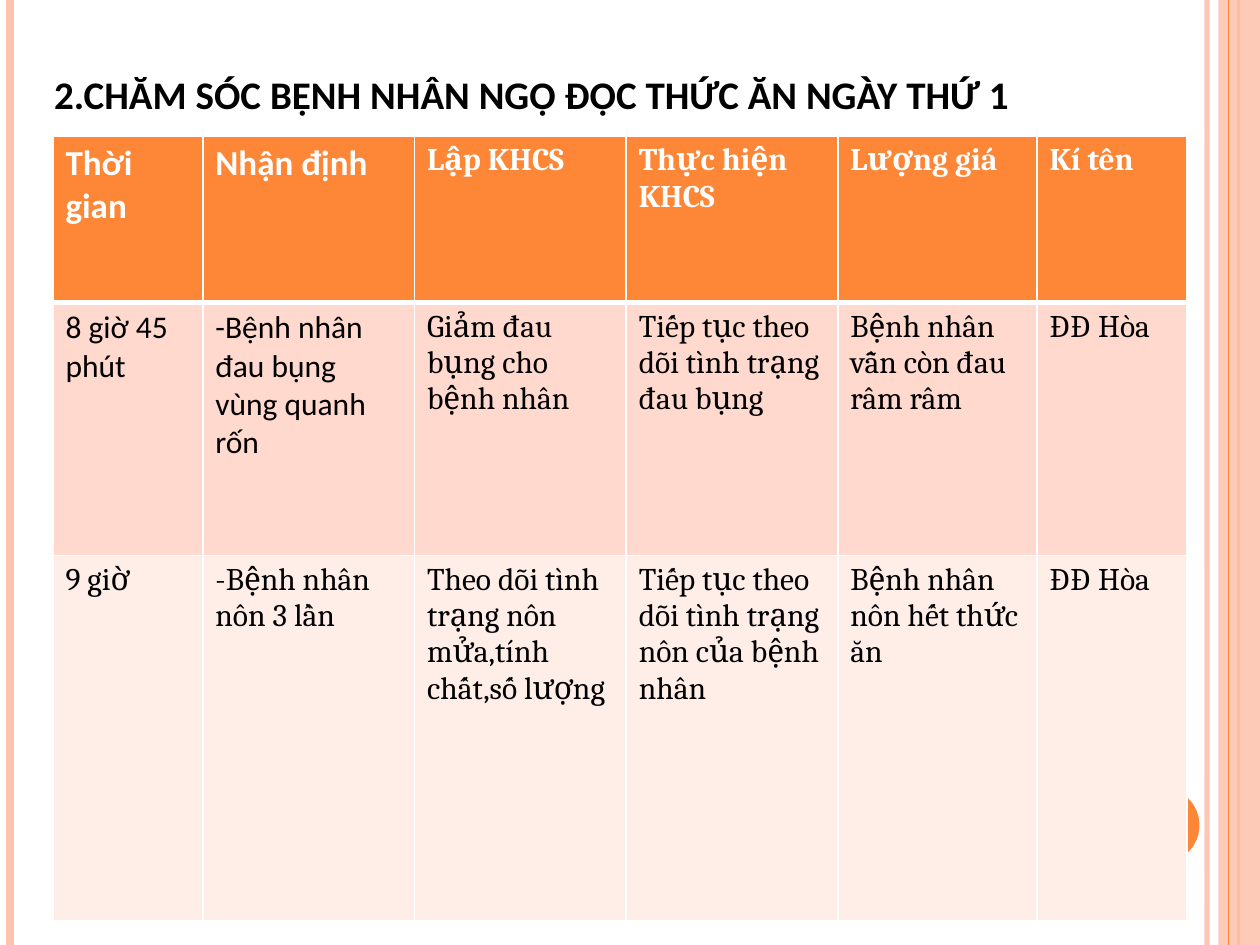
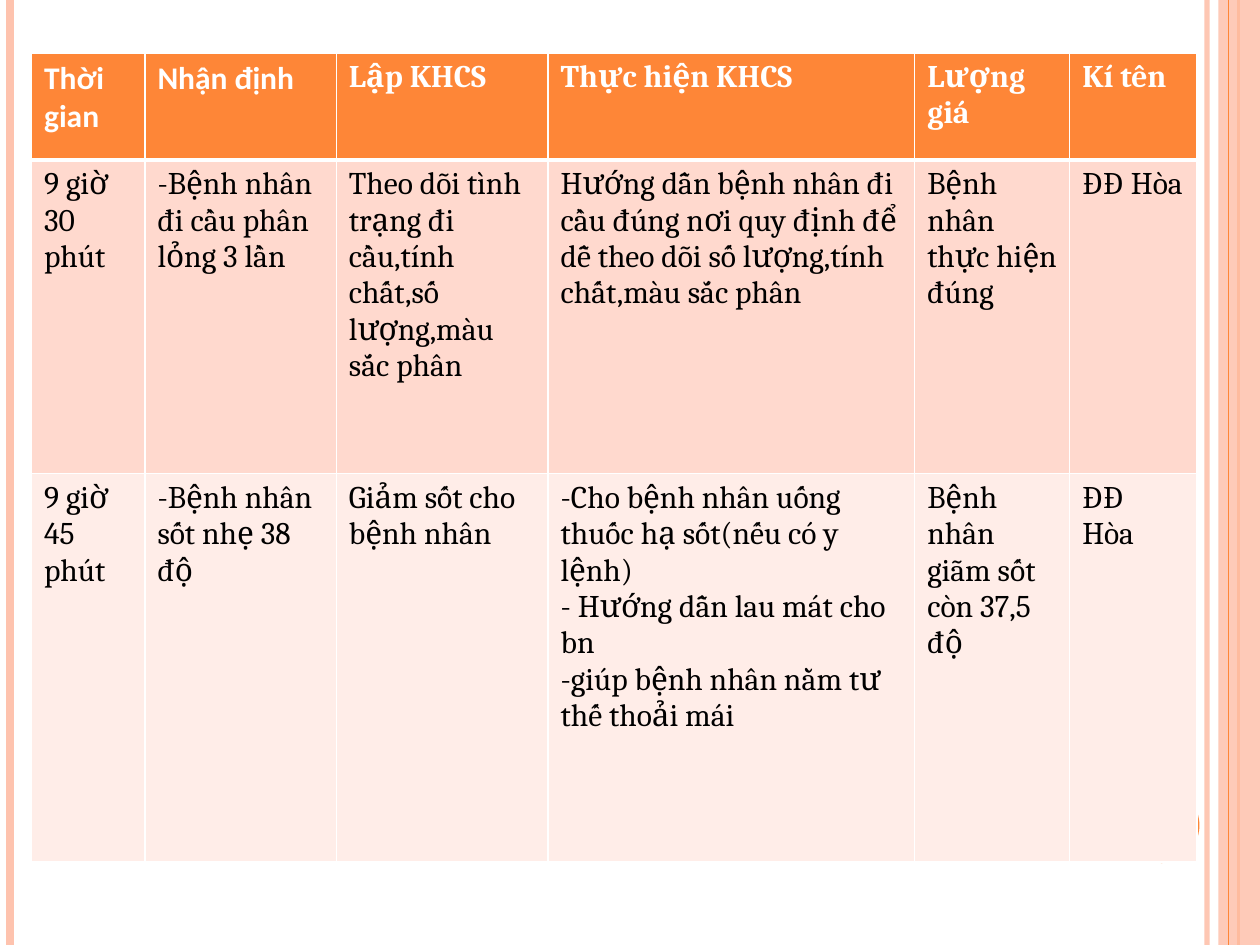
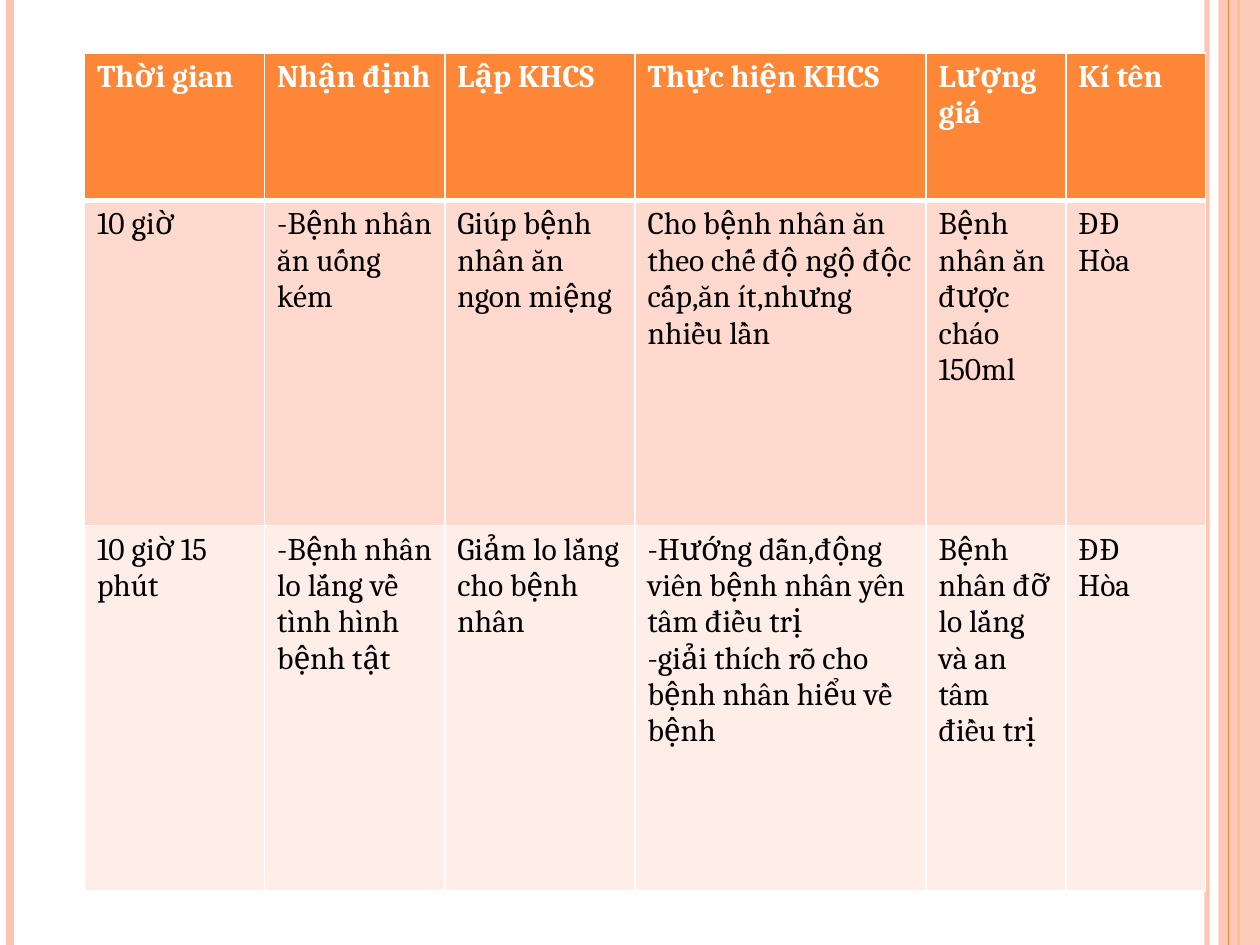
from lxml import etree
from pptx import Presentation, util as u
from pptx.dml.color import RGBColor
from pptx.enum import shapes, text
from pptx.oxml.ns import qn

INK = {
    "black": "000000",
    "white": "FFFFFF",
    "orange": "FE8637",
    "peach": "FEC3AE",
    "rose": "FFD9CE",
    "pale": "FFEDE8",
}
SERIF, SANS = "Cambria", "Calibri"
WIDE, HIGH = 10, 7.5
HEADS = ["Thời gian", "Nhận định", "Lập KHCS", "Thực hiện KHCS", "Lượng giá", "Kí tên"]
NURSE = "ĐĐ Hòa"
SPLIT = "ĐĐ\nHòa"


def tint(name):
    return RGBColor.from_string(INK[name])


def fade(fill, share):
    color = fill._xPr.find(qn("a:solidFill"))[0]
    etree.SubElement(color, qn("a:alpha"), val=str(share * 1000))


class Deck:
    def __init__(self):
        self.file = Presentation()
        self.file.slide_width = u.Inches(WIDE)
        self.file.slide_height = u.Inches(HIGH)
        self.slide = None

    def page(self, title=None):
        layout = self.file.slide_layouts[5 if title else 6]
        self.slide = self.file.slides.add_slide(layout)
        self.frame()
        if title:
            self.title(title)

    def frame(self):
        self.rule(9.58, 3, "peach", 93)
        self.rule(0.08, 4.5, "peach")
        self.rule(9.83, 1.5, "orange")
        self.shape(shapes.MSO_SHAPE.RECTANGLE, (9.67, 0, 0.33, HIGH), "peach", 87)
        self.rule(9.75, 0.75, "orange")
        self.shape(shapes.MSO_SHAPE.OVAL, (8.92, 6.25, 0.6, 0.6), "orange")

    def rule(self, left, width, color, share=100):
        line = self.slide.shapes.add_connector(
            shapes.MSO_CONNECTOR.STRAIGHT,
            u.Inches(left), u.Inches(0), u.Inches(left), u.Inches(HIGH))
        line.line.width = u.Pt(width)
        line.line.color.rgb = tint(color)
        if share < 100:
            fade(line.line.fill, share)
        etree.SubElement(line._element.spPr, qn("a:effectLst"))

    def shape(self, kind, box, color, share=100):
        item = self.slide.shapes.add_shape(kind, *map(u.Inches, box))
        item.shadow.inherit = False
        item.fill.solid()
        item.fill.fore_color.rgb = tint(color)
        item.line.fill.background()
        if share < 100:
            fade(item.fill, share)

    def style(self, frame, size, face, color, bold):
        for para in frame.paragraphs:
            para.alignment = text.PP_ALIGN.LEFT
            for run in para.runs:
                run.font.size = u.Pt(size)
                run.font.name = face
                run.font.bold = bold
                run.font.color.rgb = tint(color)

    def title(self, words):
        item = self.slide.shapes.title
        item.left, item.top = u.Inches(0.33), u.Inches(0.3)
        item.width, item.height = u.Inches(8.33), u.Inches(0.7)
        frame = item.text_frame
        frame.text = words
        frame.word_wrap = True
        frame.auto_size = text.MSO_AUTO_SIZE.NONE
        frame.vertical_anchor = text.MSO_ANCHOR.BOTTOM
        self.style(frame, 27.9, SANS, "black", True)
        frame.paragraphs[0].runs[0].font._element.set("cap", "small")

    def edge(self, cell, row):
        props = cell._tc.get_or_add_tcPr()
        wide = {"T": 3 if row == 1 else 1, "B": 3 if row == 0 else 1}
        for spot, side in enumerate("LRTB"):
            line = etree.Element(qn("a:ln" + side), w=str(u.Pt(wide.get(side, 1))))
            fill = etree.SubElement(line, qn("a:solidFill"))
            etree.SubElement(fill, qn("a:srgbClr"), val=INK["white"])
            props.insert(spot, line)

    def table(self, left, top, cols, rows, body, sans):
        data = [HEADS] + body
        grid = self.slide.shapes.add_table(
            len(rows), len(cols), u.Inches(left), u.Inches(top),
            u.Inches(sum(cols)), u.Inches(sum(rows))).table
        for col, width in zip(grid.columns, cols):
            col.width = u.Inches(width)
        for r, height in enumerate(rows):
            grid.rows[r].height = u.Inches(height)
            for c, words in enumerate(data[r]):
                cell = grid.cell(r, c)
                cell.text_frame.text = words
                cell.fill.solid()
                cell.fill.fore_color.rgb = tint(("orange", "rose", "pale")[r])
                self.edge(cell, r)
                face = SANS if (r, c) in sans else SERIF
                color = "black" if r else "white"
                self.style(cell.text_frame, sans.get((r, c), 18), face, color, r == 0)


def main():
    deck = Deck()

    deck.page("2.chăm sóc bệnh nhân ngộ độc thức ăn ngày thứ 1")
    deck.table(
        0.42, 1.08, [1.19, 1.68, 1.68, 1.68, 1.58, 1.19], [1.32, 2.01, 2.9],
        [["8 giờ 45 phút", "-Bệnh nhân đau bụng vùng quanh rốn",
          "Giảm đau bụng cho bệnh nhân",
          "Tiếp tục theo dõi tình trạng đau bụng",
          "Bệnh nhân vẫn còn đau râm râm", NURSE],
         ["9 giờ", "-Bệnh nhân nôn 3 lần",
          "Theo dõi tình trạng nôn mửa,tính chất,số lượng",
          "Tiếp tục theo dõi tình trạng nôn của bệnh nhân",
          "Bệnh nhân nôn hết thức ăn", NURSE]],
        {(0, 0): 20, (0, 1): 20, (1, 0): 18, (1, 1): 18})

    deck.page()
    deck.table(
        0.25, 0.42, [0.9, 1.52, 1.68, 2.91, 1.23, 1.01], [0.85, 2.49, 3.08],
        [["9 giờ 30 phút", "-Bệnh nhân đi cầu phân lỏng 3 lần",
          "Theo dõi tình trạng đi cầu,tính chất,số lượng,màu sắc phân",
          "Hướng dẫn bệnh nhân đi cầu đúng nơi quy định để dễ theo dõi "
          "số lượng,tính chất,màu sắc phân",
          "Bệnh nhân thực hiện đúng", NURSE],
         ["9 giờ 45 phút", "-Bệnh nhân sốt nhẹ 38 độ",
          "Giảm sốt cho bệnh nhân",
          "-Cho bệnh nhân uống thuốc hạ sốt(nếu có y lệnh)\n"
          "- Hướng dẫn lau mát cho bn\n"
          "-giúp bệnh nhân nằm tư thế thoải mái",
          "Bệnh nhân giãm sốt còn 37,5 độ", SPLIT]],
        {(0, 0): 18, (0, 1): 18})

    deck.page()
    deck.table(
        0.67, 0.42, [1.43, 1.43, 1.51, 2.31, 1.11, 1.11], [1.17, 2.58, 2.9],
        [["10 giờ", "-Bệnh nhân ăn uống kém",
          "Giúp bệnh nhân ăn ngon miệng",
          "Cho bệnh nhân ăn theo chế độ ngộ độc cấp,ăn ít,nhưng nhiều lần",
          "Bệnh nhân ăn được cháo 150ml", SPLIT],
         ["10 giờ 15 phút", "-Bệnh nhân lo lắng về tình hình bệnh tật",
          "Giảm lo lắng cho bệnh nhân",
          "-Hướng dẫn,động viên bệnh nhân yên tâm điều trị\n"
          "-giải thích rõ cho bệnh nhân hiểu về bệnh",
          "Bệnh nhân đỡ lo lắng và an tâm điều trị", SPLIT]],
        {})

    deck.file.save("out.pptx")


if __name__ == "__main__":
    main()
